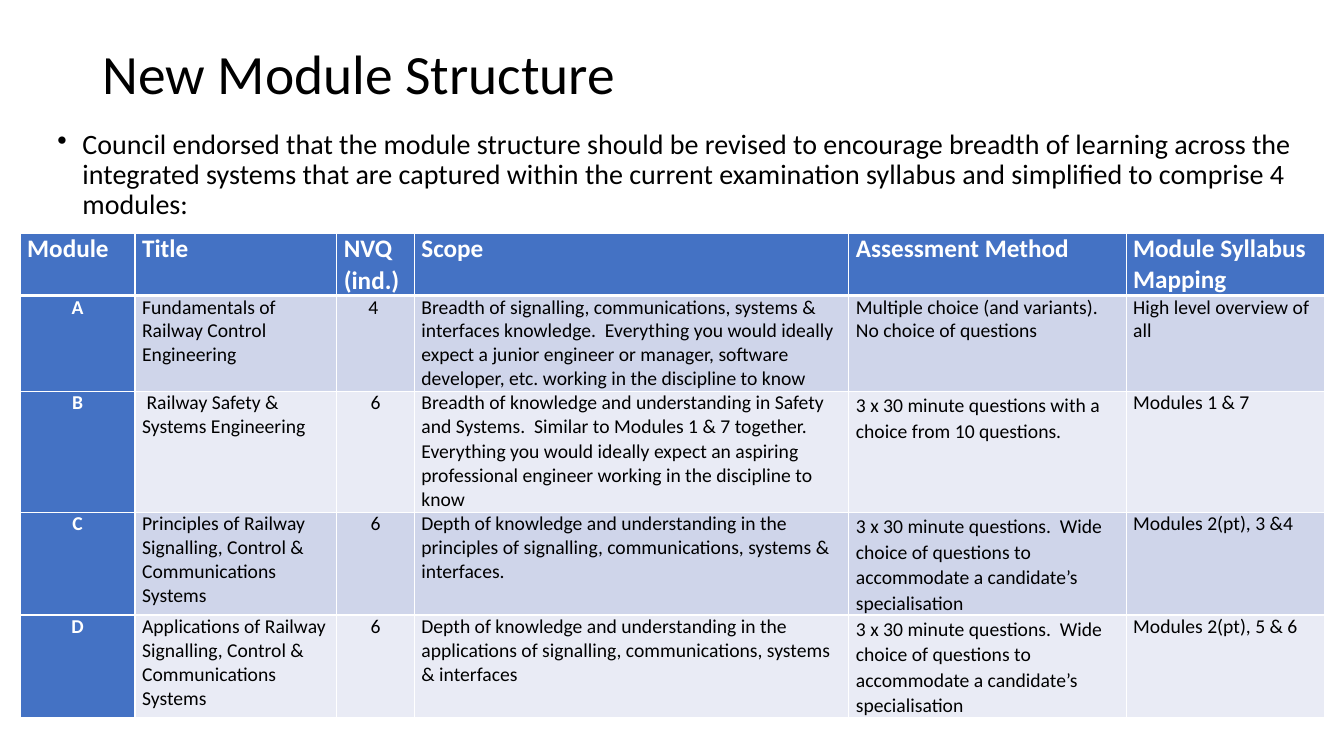
from typing import NamedTuple

from lxml.etree import SubElement
from pptx import Presentation
from pptx.dml.color import RGBColor
from pptx.enum.text import MSO_ANCHOR as Anchor, PP_ALIGN as Align
from pptx.oxml.ns import qn
from pptx.util import Emu, Pt

EMU_PER_PX = 9144  # 100 px to the inch
FONT = "Calibri"
BLACK = RGBColor(0x00, 0x00, 0x00)
WHITE = RGBColor(0xFF, 0xFF, 0xFF)
BLUE = RGBColor(0x44, 0x72, 0xC4)
BANDS = (RGBColor(0xCF, 0xD5, 0xEA), RGBColor(0xE9, 0xEB, 0xF5))


class Box(NamedTuple):
    left: int
    top: int
    width: int
    height: int


class Module(NamedTuple):
    letter: str
    title: str
    level: str
    scope: str
    assessment: str
    mapping: str


TITLE_BOX = Box(92, 40, 1150, 71)
BODY_BOX = Box(47, 124, 1246, 605)
TABLE_BOX = Box(20, 232, 1294, 480)
COLUMN_WIDTHS = (114, 200, 77, 431, 275, 197)
ROW_HEIGHTS = (61, 95, 120, 102, 102)
LETTER_COLUMN, LEVEL_COLUMN, ASSESSMENT_COLUMN = 0, 2, 4

INTRODUCTION = (
    "Council endorsed that the module structure should be revised to encourage "
    "breadth of learning across the integrated systems that are captured within "
    "the current examination syllabus and simplified to comprise 4 modules:"
)
WIDE_CHOICE = (
    "3 x 30 minute questions.  Wide choice of questions to accommodate "
    "a candidate’s specialisation"
)
ROWS = (
    Module("Module", "Title", "NVQ\n(ind.)", "Scope", "Assessment Method",
           "Module Syllabus Mapping"),
    Module("A", "Fundamentals of Railway Control Engineering", "4 ",
           "Breadth of signalling, communications, systems & interfaces knowledge.  "
           "Everything you would ideally expect a junior engineer or manager, software "
           "developer, etc. working in the discipline to know",
           "Multiple choice (and variants).  No choice of questions",
           "High level overview of all"),
    Module("B", " Railway Safety & Systems Engineering", "6",
           "Breadth of knowledge and understanding in Safety and Systems.  "
           "Similar to Modules 1 & 7 together.\n"
           "Everything you would ideally expect an aspiring professional engineer "
           "working in the discipline to know",
           "3 x 30 minute questions with a choice from 10 questions.",
           "Modules 1 & 7"),
    Module("C", "Principles of Railway Signalling, Control & Communications Systems", "6",
           "Depth of knowledge and understanding in the principles of signalling, "
           "communications, systems & interfaces.",
           WIDE_CHOICE, "Modules 2(pt), 3 &4"),
    Module("D", "Applications of Railway Signalling, Control & Communications Systems", "6",
           "Depth of knowledge and understanding in the applications of signalling, "
           "communications, systems & interfaces",
           WIDE_CHOICE, "Modules 2(pt), 5 & 6"),
)


def px(length: int) -> Emu:
    return Emu(length * EMU_PER_PX)


def set_font(paragraph, size: float, color: RGBColor, bold: bool = False) -> None:
    font = paragraph.font
    font.name, font.size, font.bold = FONT, Pt(size), bold
    font.color.rgb = color


def add_text(slide, box: Box, text: str, size: float, anchor: Anchor):
    """Add a wrapped one-paragraph text box and return its paragraph."""
    frame = slide.shapes.add_textbox(*map(px, box)).text_frame
    frame.word_wrap = True
    frame.vertical_anchor = anchor
    frame.text = text
    paragraph = frame.paragraphs[0]
    paragraph.line_spacing = 0.9
    set_font(paragraph, size, BLACK)
    return paragraph


def add_bullet(paragraph, indent: int) -> None:
    properties = paragraph._p.get_or_add_pPr()
    properties.set("marL", str(px(indent)))
    properties.set("indent", str(-px(indent)))
    bullet = properties.makeelement(qn("a:buChar"), {"char": "•"})
    properties.find(qn("a:defRPr")).addprevious(bullet)


def add_borders(cell, top: int, bottom: int) -> None:
    """Draw white cell edges; top and bottom widths are in points."""
    properties = cell._tc.get_or_add_tcPr()
    for side, width in (("L", 1), ("R", 1), ("T", top), ("B", bottom)):
        line = SubElement(properties, qn(f"a:ln{side}"), w=str(Pt(width)))
        fill = SubElement(line, qn("a:solidFill"))
        SubElement(fill, qn("a:srgbClr"), val=str(WHITE))


def fill_cell(cell, text: str, row: int, column: int) -> None:
    is_header = row == 0
    is_blue = is_header or column == LETTER_COLUMN
    is_assessment = column == ASSESSMENT_COLUMN and row > 1

    add_borders(cell, top=3 if row == 1 else 1, bottom=3 if is_header else 1)
    cell.fill.solid()
    cell.fill.fore_color.rgb = BLUE if is_blue else BANDS[(row - 1) % 2]
    cell.margin_left = cell.margin_right = px(7)
    cell.margin_top = px(1 if is_assessment else 0)
    cell.margin_bottom = px(0)

    cell.text_frame.text = text
    for paragraph in cell.text_frame.paragraphs:
        set_font(paragraph, 18 if is_header else 14, WHITE if is_blue else BLACK, is_blue)
        paragraph.space_after = Pt(8 if is_assessment else 0.8)
        if is_assessment:
            paragraph.line_spacing = 1.07
        if not is_header and column in (LETTER_COLUMN, LEVEL_COLUMN):
            paragraph.alignment = Align.CENTER


def add_module_table(slide) -> None:
    frame = slide.shapes.add_table(len(ROWS), len(COLUMN_WIDTHS), *map(px, TABLE_BOX))
    table = frame.table
    for column, width in zip(table.columns, COLUMN_WIDTHS):
        column.width = px(width)
    for row, height in zip(table.rows, ROW_HEIGHTS):
        row.height = px(height)
    for row_index, module in enumerate(ROWS):
        for column_index, text in enumerate(module):
            fill_cell(table.cell(row_index, column_index), text, row_index, column_index)


def main() -> None:
    presentation = Presentation()
    presentation.slide_width, presentation.slide_height = px(1333), px(750)
    slide = presentation.slides.add_slide(presentation.slide_layouts[6])

    # Title and introduction
    add_text(slide, TITLE_BOX, "New Module Structure", 39.6, Anchor.MIDDLE)
    introduction = add_text(slide, BODY_BOX, INTRODUCTION, 20, Anchor.TOP)
    introduction.space_before = Pt(10)
    add_bullet(introduction, 25)

    # Module table
    add_module_table(slide)

    presentation.save("out.pptx")


if __name__ == "__main__":
    main()
